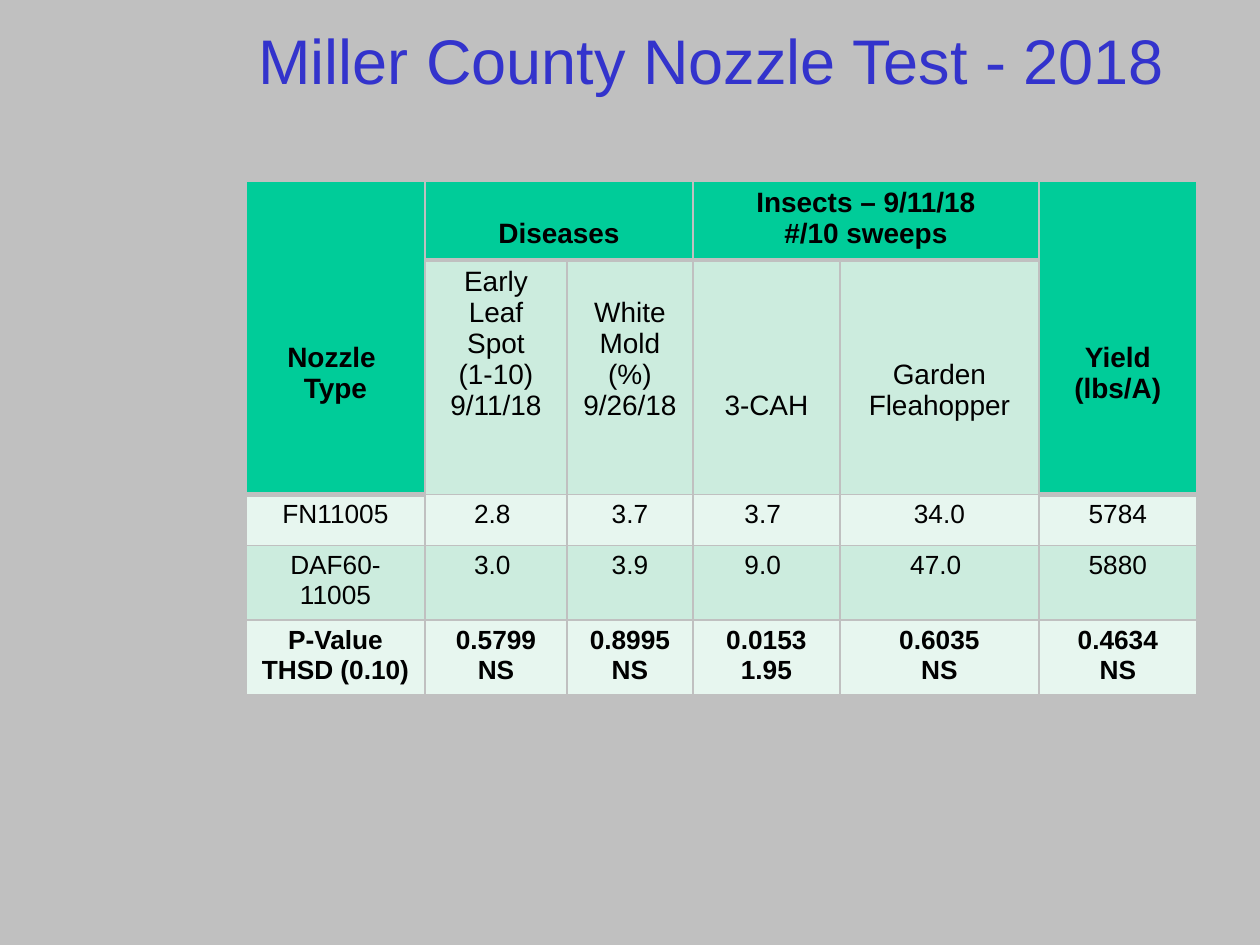
from itertools import product

from lxml.etree import SubElement
from pptx import Presentation
from pptx.dml.color import RGBColor
from pptx.enum.text import MSO_ANCHOR, PP_ALIGN
from pptx.oxml.ns import qn
from pptx.util import Pt

PX = 914400 // 126
FONT = "Arial"
GRAY, BLUE, BLACK = "C0C0C0", "3333CC", "000000"
GREEN, MINT, PALE = "00CC99", "CCECDE", "E7F6EF"

TITLE = "Miller County Nozzle Test - 2018"
COLUMN_WIDTHS = [179, 142, 126, 147, 199, 158]
ROW_HEIGHTS = [74, 231, 51, 51, 70]
TABLE_LEFT, TABLE_TOP = 246, 181
LINE_HEIGHT, CELL_INSET = 31, 6

# (row, column): (lines, row span, column span, lines of space above)
HEADINGS = {
    (0, 0): (["Nozzle ", "Type"], 2, 1, 5),
    (0, 1): (["Diseases"], 1, 2, 1),
    (0, 3): (["Insects – 9/11/18", "#/10 sweeps"], 1, 2, 0),
    (0, 5): (["Yield", "(lbs/A)"], 2, 1, 5),
}
SUBHEADINGS = [
    (["Early Leaf Spot", "(1-10)", "9/11/18"], 0),
    (["White Mold", "(%)", "9/26/18"], 1),
    (["3-CAH"], 4),
    (["Garden", "Fleahopper"], 3),
]
RESULTS = [
    ["FN11005", "2.8 ", "3.7", "3.7 ", "34.0", "5784"],
    ["DAF60-11005", "3.0 ", "3.9", "9.0 ", "47.0 ", "5880"],
]
STATISTICS = [
    ["P-Value", "THSD (0.10)"],
    ["0.5799", "NS"],
    ["0.8995", "NS"],
    ["0.0153", "1.95"],
    ["0.6035", "NS"],
    ["0.4634", "NS"],
]


def px(value):
    return value * PX


def color(value):
    return RGBColor.from_string(value)


def write(frame, lines, size, ink, align, bold=False):
    frame.word_wrap = True
    for index, line in enumerate(lines):
        para = frame.add_paragraph() if index else frame.paragraphs[0]
        para.alignment = align
        span = para.add_run()
        span.text = line
        span.font.name, span.font.size = FONT, Pt(size)
        span.font.bold = bold
        span.font.color.rgb = color(ink)


def add_border(cell, side, points):
    line = SubElement(cell._tc.get_or_add_tcPr(), qn(f"a:ln{side}"), w=str(Pt(points)))
    fill = SubElement(line, qn("a:solidFill"))
    SubElement(fill, qn("a:srgbClr"), val=GRAY)


def style_cell(cell, row, column):
    """Draw borders, thick below the headings, and the fill of the row."""
    outer = column in (0, len(COLUMN_WIDTHS) - 1)
    last_heading_row = 1 if outer else 0
    borders = {
        "L": 1,
        "R": 1,
        "T": 3 if row == last_heading_row + 1 else 1,
        "B": 3 if row == last_heading_row else 1,
    }
    for side, points in borders.items():
        add_border(cell, side, points)
    cell.fill.solid()
    band = MINT if row % 2 else PALE
    cell.fill.fore_color.rgb = color(GREEN if row <= last_heading_row else band)


def fill_cell(cell, lines, size, bold=False, lines_above=0):
    cell.margin_top = px(CELL_INSET + LINE_HEIGHT * lines_above)
    cell.margin_bottom = px(CELL_INSET)
    write(cell.text_frame, lines, size, BLACK, PP_ALIGN.CENTER, bold)


def add_title(page):
    box = page.shapes.add_textbox(px(246), px(14), px(1004), px(157))
    frame = box.text_frame
    frame.vertical_anchor = MSO_ANCHOR.TOP
    frame.margin_top = px(8)
    write(frame, [TITLE], 36, BLUE, PP_ALIGN.LEFT)


def add_results_table(page):
    table = page.shapes.add_table(
        len(ROW_HEIGHTS), len(COLUMN_WIDTHS), px(TABLE_LEFT), px(TABLE_TOP),
        px(sum(COLUMN_WIDTHS)), px(sum(ROW_HEIGHTS)),
    ).table
    table.first_row = table.horz_banding = False
    for column, width in zip(table.columns, COLUMN_WIDTHS):
        column.width = px(width)
    for row, height in zip(table.rows, ROW_HEIGHTS):
        row.height = px(height)
    for row, column in product(range(len(ROW_HEIGHTS)), range(len(COLUMN_WIDTHS))):
        style_cell(table.cell(row, column), row, column)

    for (row, column), (lines, rows, columns, above) in HEADINGS.items():
        cell = table.cell(row, column)
        cell.merge(table.cell(row + rows - 1, column + columns - 1))
        fill_cell(cell, lines, 16, True, above)
    for column, (lines, above) in enumerate(SUBHEADINGS, 1):
        fill_cell(table.cell(1, column), lines, 16, lines_above=above)
    for row, values in enumerate(RESULTS, 2):
        for column, value in enumerate(values):
            fill_cell(table.cell(row, column), [value], 15)
    for column, lines in enumerate(STATISTICS):
        fill_cell(table.cell(4, column), lines, 15, True)


def main():
    deck = Presentation()
    deck.slide_width, deck.slide_height = px(1260), px(945)
    page = deck.slides.add_slide(deck.slide_layouts[6])
    page.background.fill.solid()
    page.background.fill.fore_color.rgb = color(GRAY)
    add_title(page)
    add_results_table(page)
    deck.save("out.pptx")


if __name__ == "__main__":
    main()
